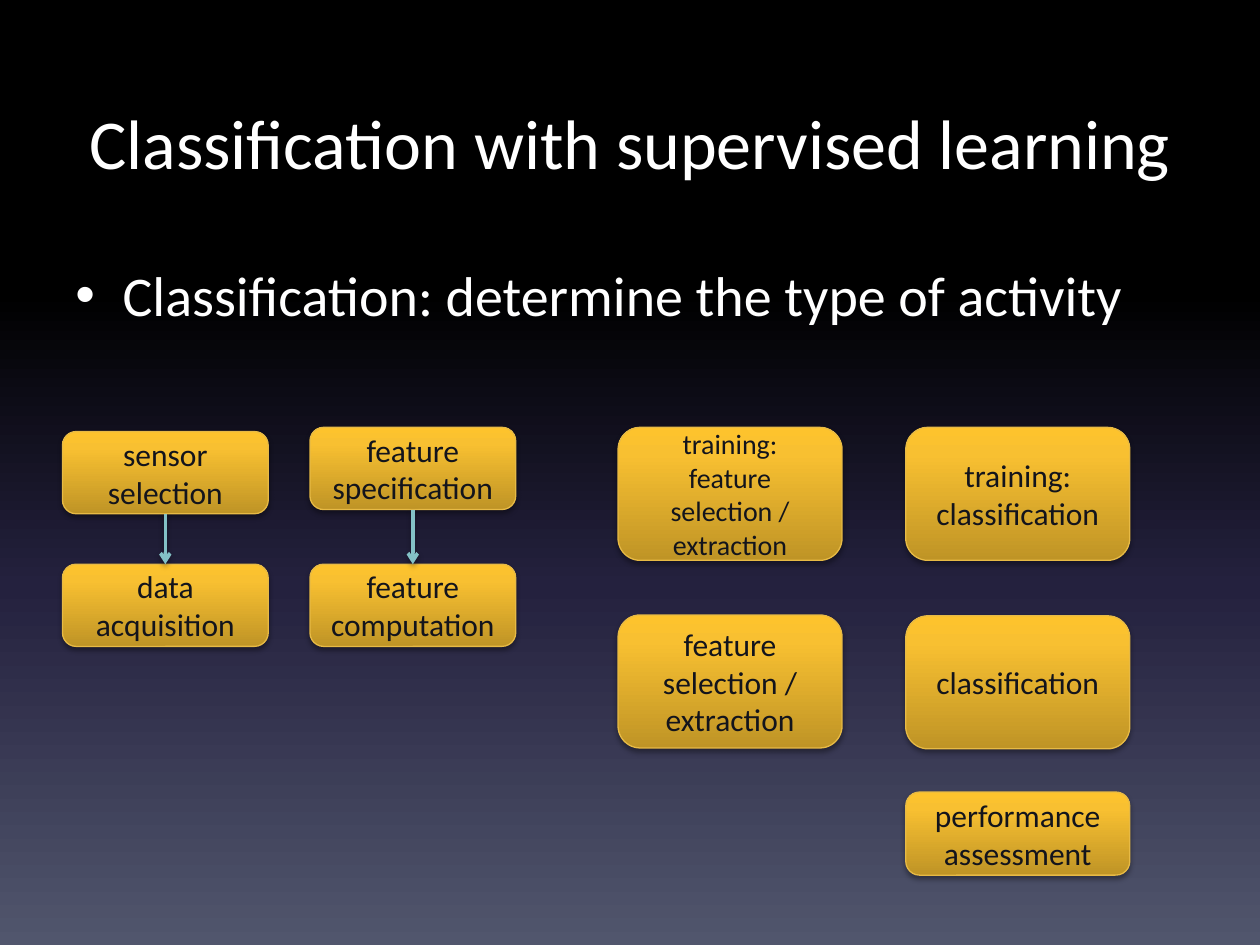
"""Build a slide on classification with supervised learning."""
from copy import deepcopy

from pptx import Presentation
from pptx.dml.color import RGBColor
from pptx.enum.shapes import MSO_CONNECTOR, MSO_SHAPE
from pptx.enum.text import MSO_ANCHOR, PP_ALIGN
from pptx.oxml import parse_xml
from pptx.oxml.ns import nsdecls, qn
from pptx.util import Pt

COLORS = {
    "black": "000000", "navy": "24213E", "slate": "51566D", "white": "FFFFFF",
    "bronze": "BF9426", "gold": "F8C031", "amber": "FDC32D",
    "edge": "E7BA45", "ink": "13141C", "teal": "83C1C6",
}
SKY = [(0, "black"), (31, "black"), (62, "navy"), (100, "slate")]
GOLD = [(0, "bronze"), (80, "gold"), (100, "amber")]
SHADOW = parse_xml(
    f'<a:effectLst {nsdecls("a")}><a:outerShdw blurRad="{Pt(3.1)}" dist="{Pt(1.8)}" '
    f'dir="5400000" rotWithShape="0"><a:srgbClr val="{COLORS["black"]}">'
    '<a:alpha val="35000"/></a:srgbClr></a:outerShdw></a:effectLst>')


def set_gradient(fill, element, stops, angle):
    fill.gradient()
    fill.gradient_angle = angle
    gs_list = element.find(".//" + qn("a:gsLst"))
    gs_list.clear()
    for position, name in stops:
        gs_list.append(parse_xml(
            f'<a:gs {nsdecls("a")} pos="{position * 1000}">'
            f'<a:srgbClr val="{COLORS[name]}"/></a:gs>'))


def set_text(sp, text, size, color, align, anchor):
    tf = sp.text_frame
    tf.word_wrap = True
    tf.vertical_anchor = anchor
    tf.text = text
    for p in tf.paragraphs:
        p.alignment = align
        for r in p.runs:
            r.font.name = "Calibri"
            r.font.size = Pt(size)
            r.font.color.rgb = RGBColor.from_string(COLORS[color])


prs = Presentation()
prs.slide_width, prs.slide_height = Pt(720), Pt(540)
s = prs.slides.add_slide(prs.slide_layouts[6])
set_gradient(s.background.fill, s.element, SKY, 270)

title = s.shapes.add_textbox(Pt(36), Pt(36), Pt(648), Pt(90))
set_text(title, "Classification with supervised learning", 40, "white",
         PP_ALIGN.CENTER, MSO_ANCHOR.MIDDLE)

body = s.shapes.add_textbox(Pt(36), Pt(126), Pt(648), Pt(121))
set_text(body, "Classification: determine the type of activity", 32, "white",
         PP_ALIGN.LEFT, MSO_ANCHOR.TOP)
p = body.text_frame.paragraphs[0]
p.line_spacing = 1.5
p.space_before = Pt(6.4)
pPr = p._p.get_or_add_pPr()
pPr.set("marL", str(Pt(27)))
pPr.set("indent", str(-Pt(27)))
pPr.append(parse_xml(f'<a:buFont {nsdecls("a")} typeface="Arial"/>'))
pPr.append(parse_xml(f'<a:buChar {nsdecls("a")} char="•"/>'))

SENSOR, FEATURE, SELECTION, CLASSIFIER = 35.7, 177.1, 353.2, 517.6
SMALL, WIDE, TALL = (117.6, 47), (128, 47.5), (128, 76)
boxes = [
    ("data acquisition", SENSOR, 322.4, SMALL, 18),
    ("feature computation", FEATURE, 322.4, SMALL, 18),
    ("sensor\nselection", SENSOR, 246.6, SMALL, 18),
    ("feature specification", FEATURE, 244.2, SMALL, 18),
    ("feature selection / extraction", SELECTION, 351.4, TALL, 18),
    ("classification", CLASSIFIER, 351.9, TALL, 18),
    ("training:\nfeature selection / extraction", SELECTION, 244.2, TALL, 16),
    ("training:\nclassification", CLASSIFIER, 244.2, TALL, 18),
    ("performance\nassessment", CLASSIFIER, 452.6, WIDE, 18),
]
for text, x, y, (w, h), size in boxes:
    sp = s.shapes.add_shape(MSO_SHAPE.ROUNDED_RECTANGLE, Pt(x), Pt(y), Pt(w), Pt(h))
    set_gradient(sp.fill, sp.element, GOLD, 90)
    sp.line.color.rgb = RGBColor.from_string(COLORS["edge"])
    sp.line.width = Pt(0.75)
    sp.element.spPr.append(deepcopy(SHADOW))
    set_text(sp, text, size, "ink", PP_ALIGN.CENTER, MSO_ANCHOR.MIDDLE)

for left, top in ((SENSOR, 293.6), (FEATURE, 291.2)):
    x = Pt(left + SMALL[0] / 2)
    arrow = s.shapes.add_connector(MSO_CONNECTOR.STRAIGHT, x, Pt(top), x, Pt(322.4))
    arrow.line.color.rgb = RGBColor.from_string(COLORS["teal"])
    arrow.line.width = Pt(2)
    arrow.line._get_or_add_ln().append(
        parse_xml(f'<a:tailEnd {nsdecls("a")} type="arrow"/>'))
    arrow._element.spPr.append(deepcopy(SHADOW))

prs.save("out.pptx")
